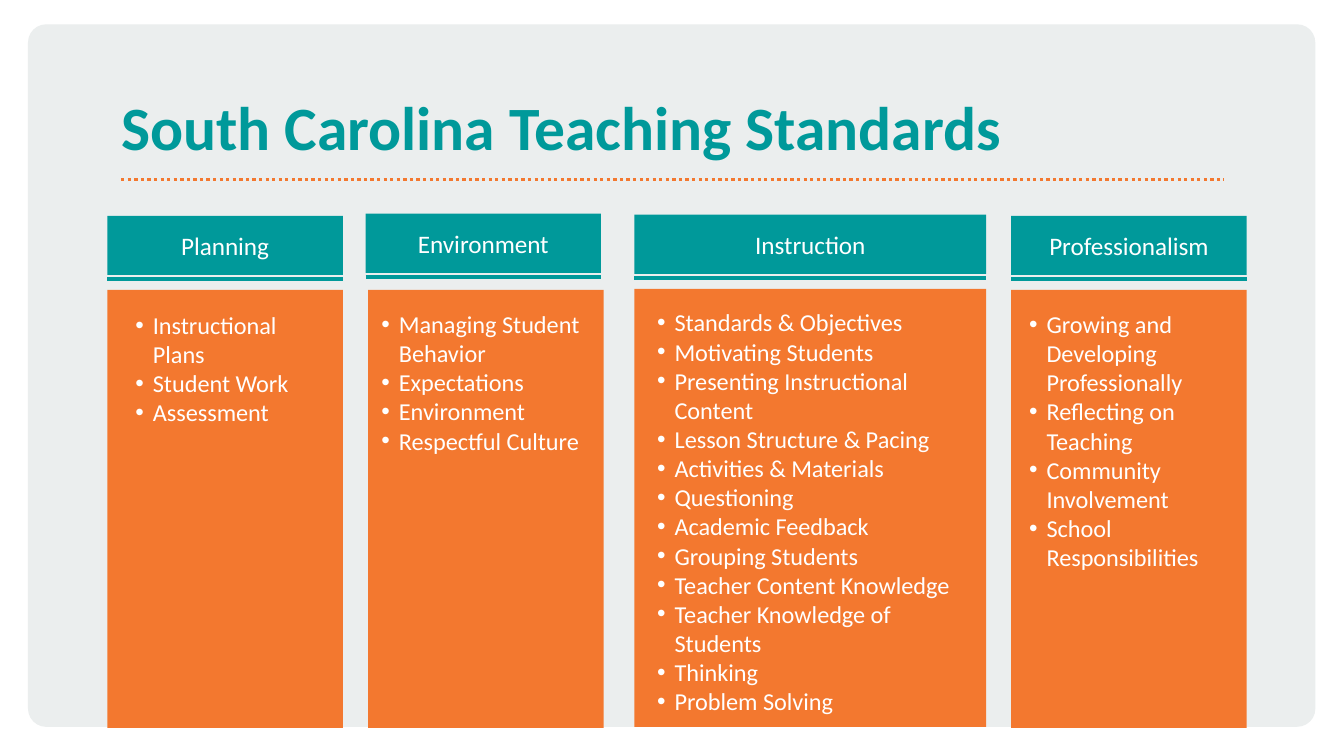
from lxml.etree import SubElement
from pptx import Presentation
from pptx.dml.color import RGBColor
from pptx.enum.dml import MSO_LINE
from pptx.enum.shapes import MSO_CONNECTOR, MSO_SHAPE
from pptx.enum.text import MSO_ANCHOR, MSO_AUTO_SIZE, PP_ALIGN
from pptx.oxml.ns import qn
from pptx.util import Cm, Pt

COLORS = {"panel": "EBEEEE", "teal": "00999A", "orange": "F3782F", "white": "FFFFFF"}
HEADER_HEIGHT = 1.12
RULE_DROP = 1.19  # from the top of a header to the line below it
BODY_HEIGHT = 8.28
INDENT = Cm(0.33)

# heading, (header left, top, width), (body left, top), list box, standards
DOMAINS = [
    ("Planning", (2.03, 4.08, 4.45), (2.03, 5.48), (2.31, 5.74, 3.91, 2.49),
     ["Instructional Plans", "Student Work", "Assessment"]),
    ("Environment", (6.91, 4.04, 4.45), (6.96, 5.48), (6.96, 5.72, 4.45, 3.02),
     ["Managing Student Behavior", "Expectations", "Environment",
      "Respectful Culture"]),
    ("Instruction", (11.99, 4.06, 6.65), (11.99, 5.46), (12.17, 5.69, 6.43, 8.03),
     ["Standards & Objectives", "Motivating Students",
      "Presenting Instructional Content", "Lesson Structure & Pacing",
      "Activities & Materials", "Questioning", "Academic Feedback",
      "Grouping Students", "Teacher Content Knowledge",
      "Teacher Knowledge of Students", "Thinking", "Problem Solving"]),
    ("Professionalism", (19.11, 4.08, 4.45), (19.11, 5.48), (19.2, 5.72, 4.45, 5.26),
     ["Growing and Developing Professionally", "Reflecting on Teaching",
      "Community Involvement", "School Responsibilities"]),
]


class SlideBuilder:
    """Holds the style and the current slide; lengths are in centimetres."""

    font_name = "Calibri"

    def __init__(self, slide):
        self.slide = slide

    def color(self, name):
        return RGBColor.from_string(COLORS[name])

    def style(self, paragraph, size, color, bold=False):
        for run in paragraph.runs:
            run.font.name = self.font_name
            run.font.size = Pt(size)
            run.font.bold = bold
            run.font.color.rgb = self.color(color)

    def block(self, left, top, width, height, fill, kind=MSO_SHAPE.RECTANGLE):
        block = self.slide.shapes.add_shape(
            kind, Cm(left), Cm(top), Cm(width), Cm(height))
        block.shadow.inherit = False
        block.fill.solid()
        block.fill.fore_color.rgb = self.color(fill)
        block.line.fill.background()
        return block

    def panel(self, left, top, width, height):
        panel = self.block(left, top, width, height, "panel",
                           MSO_SHAPE.ROUNDED_RECTANGLE)
        panel.adjustments[0] = 0.026

    def rule(self, left, top, width, color, weight, dash=None):
        rule = self.slide.shapes.add_connector(
            MSO_CONNECTOR.STRAIGHT, Cm(left), Cm(top), Cm(left + width), Cm(top))
        rule.line.color.rgb = self.color(color)
        rule.line.width = Pt(weight)
        if dash:
            rule.line.dash_style = dash
        SubElement(rule.element.spPr, qn("a:effectLst"))

    def title(self, text, left, top, width, height):
        title = self.slide.shapes.title
        title.element.getparent().append(title.element)  # in front of the panel
        title.left, title.top = Cm(left), Cm(top)
        title.width, title.height = Cm(width), Cm(height)
        frame = title.text_frame
        frame.text = text
        frame.word_wrap = True
        frame.auto_size = MSO_AUTO_SIZE.NONE
        frame.vertical_anchor = MSO_ANCHOR.BOTTOM
        frame.margin_left = frame.margin_right = 0
        frame.margin_top = frame.margin_bottom = 0
        heading = frame.paragraphs[0]
        heading.alignment = PP_ALIGN.LEFT
        heading.line_spacing = 0.85
        self.style(heading, 33, "teal", bold=True)

    def header(self, text, left, top, width):
        """Draw a domain heading with the line below it."""
        frame = self.block(left, top, width, HEADER_HEIGHT, "teal").text_frame
        frame.text = text
        frame.vertical_anchor = MSO_ANCHOR.MIDDLE
        frame.paragraphs[0].alignment = PP_ALIGN.CENTER
        self.style(frame.paragraphs[0], 13.5, "white")
        self.rule(left, top + RULE_DROP, width, "teal", 2.25)

    def bullets(self, items, left, top, width, height):
        box = self.slide.shapes.add_textbox(
            Cm(left), Cm(top), Cm(width), Cm(height))
        frame = box.text_frame
        frame.word_wrap = True
        frame.auto_size = MSO_AUTO_SIZE.SHAPE_TO_FIT_TEXT
        frame.text = "\n".join(items)
        for paragraph in frame.paragraphs:
            properties = paragraph._p.get_or_add_pPr()
            properties.set("marL", str(INDENT))
            properties.set("indent", str(-INDENT))
            SubElement(properties, qn("a:buFont"), typeface="Arial")
            SubElement(properties, qn("a:buChar"), char="•")
            self.style(paragraph, 13, "white")


def main():
    presentation = Presentation()
    presentation.slide_width = Cm(25.4)
    presentation.slide_height = Cm(14.29)
    title_only = presentation.slide_layouts[5]
    builder = SlideBuilder(presentation.slides.add_slide(title_only))

    builder.panel(0.53, 0.46, 24.33, 13.28)
    builder.rule(2.29, 3.39, 20.85, "orange", 1.75, MSO_LINE.ROUND_DOT)
    builder.title("South Carolina Teaching Standards", 2.29, 0.41, 20.83, 2.67)

    for heading, header, body, list_box, standards in DOMAINS:
        width = header[2]
        builder.block(*body, width, BODY_HEIGHT, "orange")
        builder.bullets(standards, *list_box)
        builder.header(heading, *header)

    presentation.save("out.pptx")


if __name__ == "__main__":
    main()
